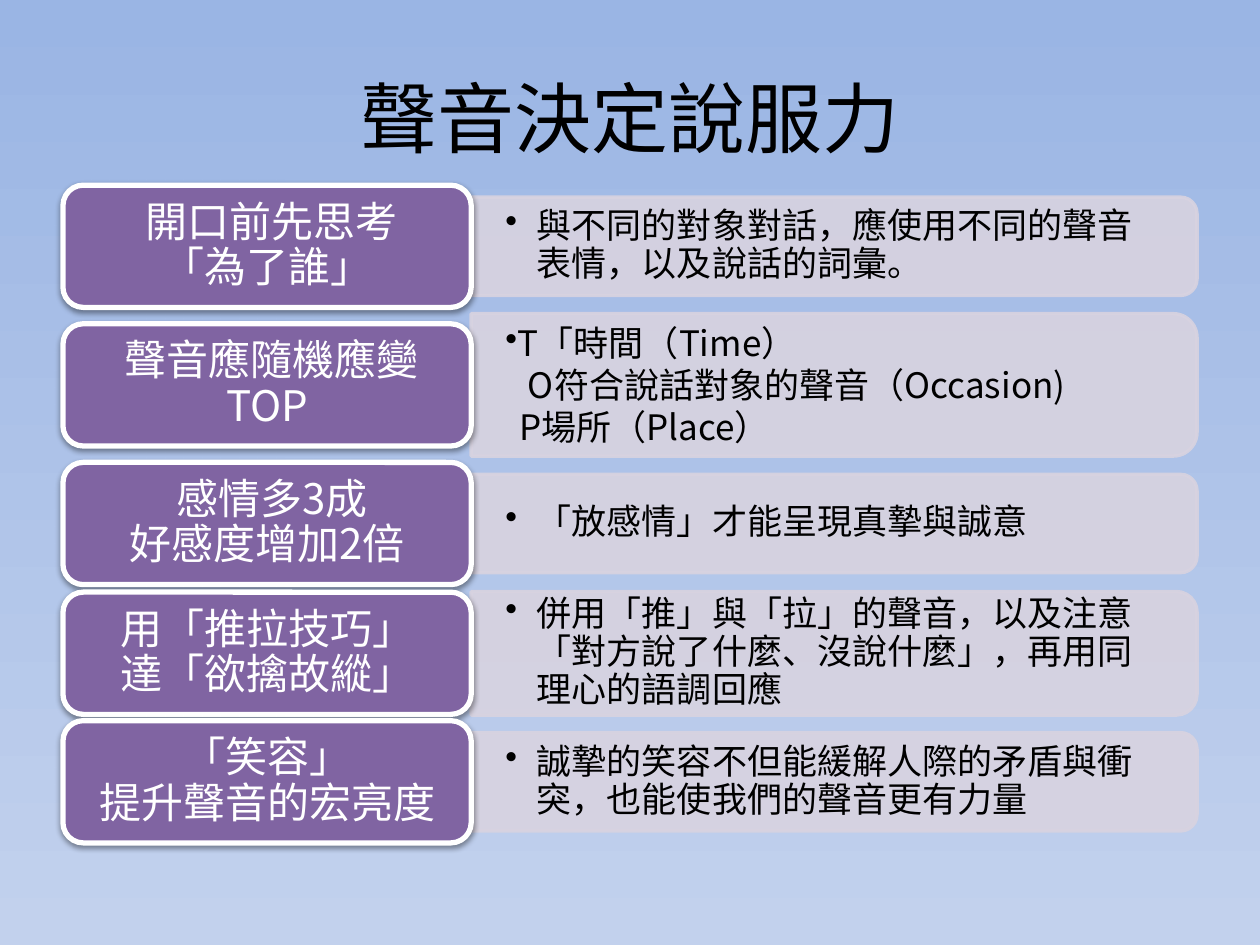
from lxml.etree import SubElement
from pptx import Presentation
from pptx.dml.color import RGBColor
from pptx.enum.shapes import MSO_SHAPE as Shape
from pptx.enum.text import MSO_ANCHOR as Anchor, PP_ALIGN as Align
from pptx.oxml.ns import qn
from pptx.util import Inches, Pt


def color(value):
    return RGBColor.from_string(value)


def set_alpha(fill, percent):
    node = fill._xPr.find(qn("a:solidFill"))[0]
    SubElement(node, qn("a:alpha"), val=str(percent * 1000))


class SlideMaker:
    font_name = "Noto Sans CJK SC"
    ink = "000000"
    white = "FFFFFF"
    card_fill = "8064A2"
    panel_fill = "D8D3E0"
    sky = ("9AB5E4", "C2D1ED")
    left, split, right = 0.5, 3.74, 9.5
    card_height = 0.97

    def __init__(self, page):
        self.page = page

    def background(self):
        fill = self.page.background.fill
        fill.gradient()
        fill.gradient_angle = 270
        for stop, value in zip(fill.gradient_stops, self.sky):
            stop.color.rgb = color(value)

    def format_frame(self, frame, margins=(0.1, 0.05)):
        side, edge = (Inches(margin) for margin in margins)
        values = {
            "word_wrap": True,
            "vertical_anchor": Anchor.MIDDLE,
            "margin_left": side,
            "margin_right": side,
            "margin_top": edge,
            "margin_bottom": edge,
        }
        for name, value in values.items():
            setattr(frame, name, value)

    def fill_para(self, para, text, size, ink, **values):
        para.text = text
        for name, value in values.items():
            setattr(para, name, value)
        for span in para.runs:
            for name, value in {"size": Pt(size), "name": self.font_name}.items():
                setattr(span.font, name, value)
            span.font.color.rgb = color(ink)
            SubElement(span.font._element, qn("a:ea"), typeface=self.font_name)

    def title(self, text):
        box = self.page.shapes.title
        place = {"left": 0.5, "top": 0.3, "width": 9, "height": 1.25}
        for name, value in place.items():
            setattr(box, name, Inches(value))
        self.format_frame(box.text_frame)
        self.fill_para(box.text_frame.paragraphs[0], text, 44, self.ink,
                       alignment=Align.CENTER)

    def shape(self, kind, place, fill, line, width):
        box = self.page.shapes.add_shape(kind, *map(Inches, place))
        box.shadow.inherit = False
        box.fill.solid()
        box.fill.fore_color.rgb = color(fill)
        box.line.color.rgb = color(line)
        box.line.width = Pt(width)
        return box

    def panel(self, middle, height):
        length = self.right - self.split
        center = (self.split + self.right) / 2
        place = (center - height / 2, middle - length / 2, height, length)
        box = self.shape(Shape.ROUND_2_SAME_RECTANGLE, place,
                         self.panel_fill, self.panel_fill, 2)
        box.rotation = 90
        set_alpha(box.fill, 90)
        set_alpha(box.line.fill, 90)

    def details(self, middle, height, lines):
        place = (self.split, middle - height / 2, self.right - self.split - 0.04, height)
        box = self.page.shapes.add_textbox(*map(Inches, place))
        frame = box.text_frame
        self.format_frame(frame, (0.27, 0.14))
        spacing = 0.9 if len(lines) == 1 else 1.0
        for index, (text, margin, hanging, bullet) in enumerate(lines):
            para = frame.add_paragraph() if index else frame.paragraphs[0]
            props = para._p.get_or_add_pPr()
            props.set("marL", str(Inches(margin)))
            props.set("indent", str(Inches(-hanging)))
            if bullet:
                SubElement(props, qn("a:buChar"), char="•")
            self.fill_para(para, text, 20, self.ink, line_spacing=spacing)

    def card(self, top, text):
        place = (self.left, top, self.split - self.left, self.card_height)
        box = self.shape(Shape.ROUNDED_RECTANGLE, place,
                         self.card_fill, self.white, 3)
        effects = box._element.spPr.find(qn("a:effectLst"))
        shadow = SubElement(effects, qn("a:outerShdw"), blurRad=str(Pt(3.1)),
                            dist=str(Pt(1.6)), dir="5400000", rotWithShape="0")
        shade = SubElement(shadow, qn("a:srgbClr"), val="000000")
        SubElement(shade, qn("a:alpha"), val="38000")
        self.format_frame(box.text_frame)
        self.fill_para(box.text_frame.paragraphs[0], text, 24, self.white,
                       alignment=Align.CENTER, line_spacing=0.9)

    def row(self, top, height, label, lines):
        middle = top + self.card_height / 2
        self.panel(middle, height)
        self.details(middle, height * 0.9, lines)
        self.card(top, label)


def bullet_line(text):
    return [(text, 0.25, 0.25, True)]


ROWS = [
    (1.47, 0.78, " 開口前先思考\n「為了誰」",
     bullet_line("與不同的對象對話，應使用不同的聲音表情，以及說話的詞彙。")),
    (2.57, 1.13, " 聲音應隨機應變\nTOP",
     [("T「時間（Time）", 0, 0, True),
      ("O符合說話對象的聲音（Occasion)", 0.18, 0, False),
      ("P場所（Place）", 0.11, 0, False)]),
    (3.67, 0.78, " 感情多3成\n好感度增加2倍",
     bullet_line("「放感情」才能呈現真摯與誠意")),
    (4.7, 0.98, "用「推拉技巧」\n達「欲擒故縱」",
     bullet_line("併用「推」與「拉」的聲音，以及注意「對方說了什麼、沒說什麼」，再用同理心的語調回應")),
    (5.72, 0.78, "「笑容」\n提升聲音的宏亮度",
     bullet_line("誠摯的笑容不但能緩解人際的矛盾與衝突，也能使我們的聲音更有力量")),
]


def main():
    deck = Presentation()
    deck.slide_width, deck.slide_height = Inches(10), Inches(7.5)
    maker = SlideMaker(deck.slides.add_slide(deck.slide_layouts[5]))
    maker.background()
    maker.title("聲音決定說服力")
    for row in ROWS:
        maker.row(*row)
    deck.save("out.pptx")


if __name__ == "__main__":
    main()
